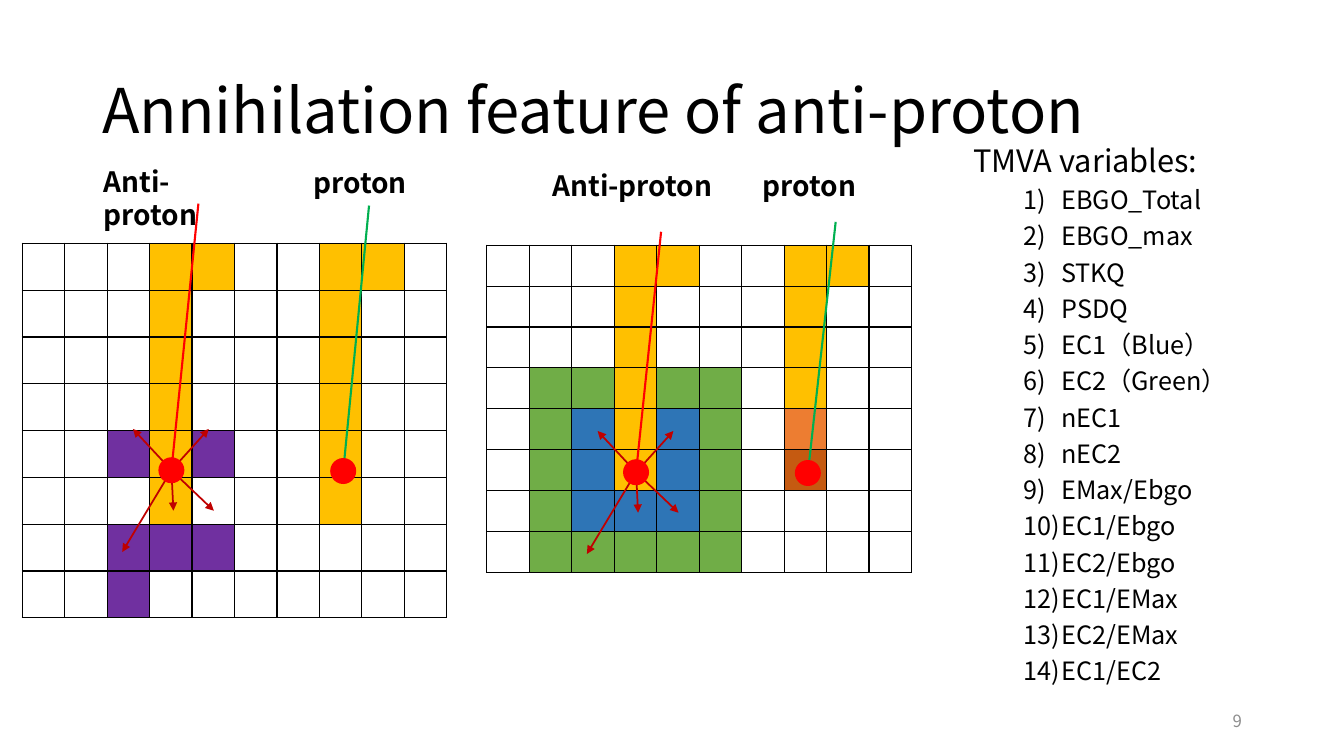
from lxml import etree
from pptx import Presentation
from pptx.dml.color import RGBColor
from pptx.enum.shapes import MSO_CONNECTOR, MSO_SHAPE
from pptx.enum.text import MSO_ANCHOR, PP_ALIGN
from pptx.oxml.ns import qn
from pptx.util import Cm, Pt

STRAIGHT = MSO_CONNECTOR.STRAIGHT
OVAL = MSO_SHAPE.OVAL
MIDDLE = MSO_ANCHOR.MIDDLE
RIGHT = PP_ALIGN.RIGHT

FONT = "Noto Sans CJK SC"
BLACK, GRAY, RED, GREEN, DARK_RED = "000000", "8C8C8C", "FF0000", "00B050", "C00000"
CELL_COLORS = {"Y": "FFC000", "P": "7030A0", "G": "70AD47",
               "B": "2E75B6", "O": "ED7D31", "D": "C55A11"}
HIT_PATTERN = [
    "...YY..YY.",
    "...Y...Y..",
    "...Y...Y..",
    "...Y...Y..",
    "..PYP..Y..",
    "...Y...Y..",
    "..PPP.....",
    "..P.......",
]
REGION_PATTERN = [
    "...YY..YY.",
    "...Y...Y..",
    "...Y...Y..",
    ".GGYGG.Y..",
    ".GBYBG.O..",
    ".GBYBG.D..",
    ".GBBBG....",
    ".GGGGG....",
]
COLUMN_WIDTH = 1.07
DOT_SIZE = 0.62
SECONDARY_OFFSETS = [(-0.97, -1.04), (-1.24, 2.06), (0.94, -1.04), (1.07, 1.02), (0.05, 1.02)]
VARIABLES = ["EBGO_Total", "EBGO_max", "STKQ", "PSDQ", "EC1（Blue）", "EC2（Green）",
             "nEC1", "nEC2", "EMax/Ebgo", "EC1/Ebgo", "EC2/Ebgo", "EC1/EMax",
             "EC2/EMax", "EC1/EC2"]


def color(value):
    return RGBColor.from_string(value)


def add_text_run(paragraph, text, size, text_color=BLACK, bold=False):
    run = paragraph.add_run()
    run.text = text
    font_format = {"name": FONT, "size": Pt(size), "bold": bold}
    for name, value in font_format.items():
        setattr(run.font, name, value)
    run.font.color.rgb = color(text_color)
    etree.SubElement(run.font._element, qn("a:ea"), typeface=FONT)


def add_text(slide, box, text, size, text_color=BLACK, bold=False,
             frame_format=None, paragraph_format=None):
    frame = slide.shapes.add_textbox(*map(Cm, box)).text_frame
    for name, value in {"word_wrap": True, **(frame_format or {})}.items():
        setattr(frame, name, value)
    paragraph = frame.paragraphs[0]
    for name, value in (paragraph_format or {}).items():
        setattr(paragraph, name, value)
    add_text_run(paragraph, text, size, text_color, bold)
    return frame


def add_numbered_item(frame, text):
    paragraph = frame.add_paragraph()
    for name, value in {"level": 1, "line_spacing": 1.2}.items():
        setattr(paragraph, name, value)
    properties = paragraph._p.get_or_add_pPr()
    properties.set("marL", str(Cm(2.22)))
    properties.set("indent", str(Cm(-0.95)))
    etree.SubElement(properties, qn("a:buFont"), typeface="+mj-lt")
    etree.SubElement(properties, qn("a:buAutoNum"), type="arabicParenR")
    add_text_run(paragraph, text, 18)


def style_cell(cell, code):
    for side in ("left", "right", "top", "bottom"):
        setattr(cell, f"margin_{side}", 0)
    properties = cell._tc.get_or_add_tcPr()
    for tag in ("a:lnL", "a:lnR", "a:lnT", "a:lnB"):
        border = etree.SubElement(properties, qn(tag), w=str(Pt(1)))
        fill = etree.SubElement(border, qn("a:solidFill"))
        etree.SubElement(fill, qn("a:srgbClr"), val=BLACK)
    if code in CELL_COLORS:
        cell.fill.solid()
        cell.fill.fore_color.rgb = color(CELL_COLORS[code])
    else:
        cell.fill.background()


def add_grid(slide, left, top, row_height, pattern):
    rows, columns = len(pattern), len(pattern[0])
    table = slide.shapes.add_table(rows, columns, Cm(left), Cm(top),
                                   Cm(COLUMN_WIDTH * columns), Cm(row_height * rows)).table
    for name in ("first_row", "horz_banding"):
        setattr(table, name, False)
    for column in table.columns:
        column.width = Cm(COLUMN_WIDTH)
    for row, codes in zip(table.rows, pattern):
        row.height = Cm(row_height)
        for cell, code in zip(row.cells, codes):
            style_cell(cell, code)


def add_track(slide, start, end, line_color, width, tail):
    connector = slide.shapes.add_connector(STRAIGHT, *map(Cm, (*start, *end)))
    connector.line.color.rgb = color(line_color)
    connector.line.width = Pt(width)
    etree.SubElement(connector.line._get_or_add_ln(), qn("a:tailEnd"), type=tail)
    etree.SubElement(connector._element.spPr, qn("a:effectLst"))


def add_dot(slide, center):
    left, top = (value - DOT_SIZE / 2 for value in center)
    shape = slide.shapes.add_shape(OVAL, *map(Cm, (left, top, DOT_SIZE, DOT_SIZE)))
    shape.shadow.inherit = False
    shape.fill.solid()
    shape.fill.fore_color.rgb = color(RED)
    shape.line.color.rgb = color(RED)
    shape.line.width = Pt(1)


def add_annihilation(slide, start, center):
    add_track(slide, start, center, RED, 1.5, "oval")
    x, y = center
    for dx, dy in SECONDARY_OFFSETS:
        add_track(slide, center, (x + dx, y + dy), DARK_RED, 1.25, "triangle")
    add_dot(slide, center)


def add_proton(slide, start, center):
    add_track(slide, start, center, GREEN, 1.5, "oval")
    add_dot(slide, center)


def main():
    presentation = Presentation()
    presentation.slide_width, presentation.slide_height = Cm(33.87), Cm(19.05)
    slide = presentation.slides.add_slide(presentation.slide_layouts[6])

    add_text(slide, (2.33, 1.01, 29.21, 3.68), "Annihilation feature of anti-proton", 44,
             frame_format={"vertical_anchor": MIDDLE}, paragraph_format={"line_spacing": 0.9})

    add_grid(slide, 0.56, 6.13, 1.18, HIT_PATTERN)
    add_annihilation(slide, (5, 5.13), (4.32, 11.85))
    add_proton(slide, (9.3, 5.18), (8.65, 11.87))

    add_grid(slide, 12.27, 6.18, 1.03, REGION_PATTERN)
    add_annihilation(slide, (16.66, 5.84), (16.03, 11.9))
    add_proton(slide, (21.06, 5.59), (20.36, 11.92))

    for box, label in [((2.36, 4.01, 4.39, 1.96), "Anti-proton"),
                       ((7.65, 4.04, 3.68, 1.12), "proton"),
                       ((13.67, 4.11, 5.16, 1.12), "Anti-proton"),
                       ((18.97, 4.11, 3.76, 1.12), "proton")]:
        add_text(slide, box, label, 20, bold=True)

    frame = add_text(slide, (24.28, 3.25, 7.8, 15.09), "TMVA variables:", 22,
                     paragraph_format={"line_spacing": 1.2})
    for variable in VARIABLES:
        add_numbered_item(frame, variable)

    add_text(slide, (23.93, 17.65, 7.62, 1.02), "9", 12, GRAY,
             frame_format={"vertical_anchor": MIDDLE}, paragraph_format={"alignment": RIGHT})
    presentation.save("out.pptx")


if __name__ == "__main__":
    main()
